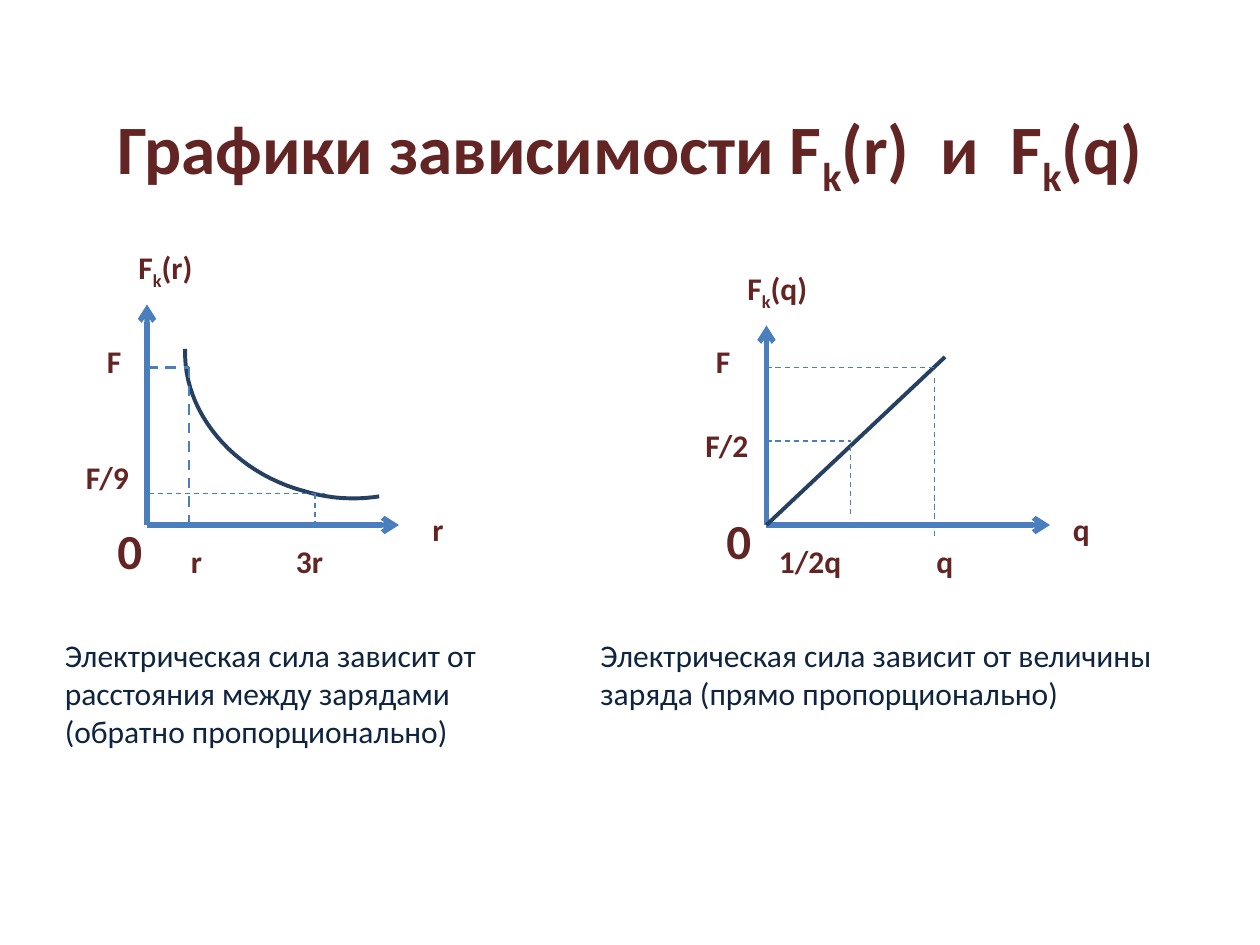
from dataclasses import dataclass

from lxml import etree
from pptx import Presentation
from pptx.dml.color import RGBColor
from pptx.enum import dml, shapes, text
from pptx.oxml import ns
from pptx.util import Pt


@dataclass(frozen=True)
class Theme:
    font: str = "Calibri"
    heading: str = "632523"
    body: str = "0F243E"
    axis: str = "4B7EBC"
    curve: str = "254061"
    title_size: float = 39.6
    label_size: float = 18
    origin_size: float = 28
    axis_width: float = 3
    curve_width: float = 2.25
    guide_width: float = 0.75


THEME = Theme()

INVERSE = {
    "axes": [(0, -126), (144, 0)],
    "guides": [((96, -18), (96, 0), 0.75), ((102, -18), (0, -18), 0.75),
               ((0, -90), (24, -90), 1.5), ((24, -90), (24, 0), 1.5)],
    "curves": [((132.7, -16.3), (119, -14.2), (104.6, -14.9), (90.2, -19.2)),
               ((90.2, -19.2), (49.2, -30), (20.4, -64.6), (21.8, -100.6))],
    "origin": (-24, -6),
    "labels": [("F|k|(r)", -12, -162, 60), ("r", 156, -12, 24),
               ("F", -30, -108, 26), ("F/9", -42, -42, 42),
               ("r", 18, 6, 24), ("3r", 78, 6, 36)],
}

DIRECT = {
    "axes": [(0, -114), (162, 0)],
    "guides": [((0, -90), (96, -90), 0.75), ((96, -84), (96, 6), 0.75),
               ((0, -48), (48, -48), 0.75), ((48, -6), (48, -48), 0.75)],
    "line": (102, -96),
    "origin": (-30, -12),
    "labels": [("F|k|(q)", -18, -150, 60), ("q", 168, -12, 28),
               ("1/2q", 0, 6, 70), ("q", 90, 6, 28),
               ("F", -36, -108, 26), ("F/2", -42, -60, 42)],
}


def set_values(target, values):
    for name, value in values.items():
        setattr(target, name, value)


def write(frame, content, size, color, bold=True):
    paragraph = frame.paragraphs[0]
    for index, part in enumerate(content.split("|")):
        run = paragraph.add_run()
        run.text = part
        set_values(run.font, {"name": THEME.font, "size": Pt(size), "bold": bold})
        run.font.color.rgb = RGBColor.from_string(color)
        if index % 2:
            run.font._element.set("baseline", "-25000")
    return paragraph


def add_text(slide, content, box, size, color, bold=True):
    shape = slide.shapes.add_textbox(*map(Pt, box))
    set_values(shape.text_frame, {"word_wrap": True, "auto_size": text.MSO_AUTO_SIZE.NONE})
    write(shape.text_frame, content, size, color, bold)


def add_line(slide, start, end, color, width, dashed=False, arrow=False):
    connector = slide.shapes.add_connector(
        shapes.MSO_CONNECTOR.STRAIGHT, *map(Pt, (*start, *end)))
    connector.line.color.rgb = RGBColor.from_string(color)
    connector.line.width = Pt(width)
    if dashed:
        connector.line.dash_style = dml.MSO_LINE.DASH
    if arrow:
        tail = etree.SubElement(connector.line._get_or_add_ln(), ns.qn("a:tailEnd"))
        tail.set("type", "arrow")
    etree.SubElement(connector._element.spPr, ns.qn("a:effectLst"))


def bezier_point(points, t):
    weights = ((1 - t) ** 3, 3 * t * (1 - t) ** 2, 3 * t ** 2 * (1 - t), t ** 3)
    return tuple(sum(w * point[axis] for w, point in zip(weights, points)) for axis in (0, 1))


def add_curve(slide, place, curves, steps=24):
    points = [place(bezier_point(curve, step / steps))
              for curve in curves for step in range(steps + 1)]
    vertices = [(Pt(x), Pt(y)) for x, y in points]
    builder = slide.shapes.build_freeform(*vertices[0])
    builder.add_line_segments(vertices[1:], close=False)
    shape = builder.convert_to_shape()
    shape.shadow.inherit = False
    shape.fill.background()
    shape.line.color.rgb = RGBColor.from_string(THEME.curve)
    shape.line.width = Pt(THEME.curve_width)


def add_title(slide, box, content):
    title = slide.shapes.title
    set_values(title, dict(zip(("left", "top", "width", "height"), map(Pt, box))))
    set_values(title.text_frame, {"word_wrap": True,
                                  "auto_size": text.MSO_AUTO_SIZE.NONE,
                                  "vertical_anchor": text.MSO_ANCHOR.MIDDLE})
    paragraph = write(title.text_frame, content, THEME.title_size, THEME.heading)
    paragraph.alignment = text.PP_ALIGN.CENTER


def add_graph(slide, left, base, graph):
    def place(point):
        return left + point[0], base + point[1]

    origin = place((0, 0))
    for end in graph["axes"]:
        add_line(slide, origin, place(end), THEME.axis, THEME.axis_width, arrow=True)
    if "line" in graph:
        add_line(slide, origin, place(graph["line"]), THEME.curve, THEME.curve_width)
    if "curves" in graph:
        add_curve(slide, place, graph["curves"])
    for start, end, width in graph["guides"]:
        add_line(slide, place(start), place(end), THEME.axis, width, dashed=True)
    add_text(slide, "0", (*place(graph["origin"]), 30, 41), THEME.origin_size, THEME.heading)
    for content, x, y, width in graph["labels"]:
        add_text(slide, content, (*place((x, y)), width, 29), THEME.label_size, THEME.heading)


def add_caption(slide, box, content):
    add_text(slide, content, box, THEME.label_size, THEME.body, bold=False)


def main():
    presentation = Presentation()
    set_values(presentation, {"slide_width": Pt(720), "slide_height": Pt(540)})
    slide = presentation.slides.add_slide(presentation.slide_layouts[5])
    add_title(slide, (36, 42, 648, 90), "Графики зависимости F|k|(r)  и  F|k|(q)")
    add_graph(slide, 84, 300, INVERSE)
    add_graph(slide, 438, 300, DIRECT)
    add_caption(slide, (30, 360, 258, 73),
                "Электрическая сила зависит от расстояния между зарядами "
                "(обратно пропорционально)")
    add_caption(slide, (336, 360, 336, 51),
                "Электрическая сила зависит от величины заряда (прямо пропорционально)")
    presentation.save("out.pptx")


if __name__ == "__main__":
    main()
